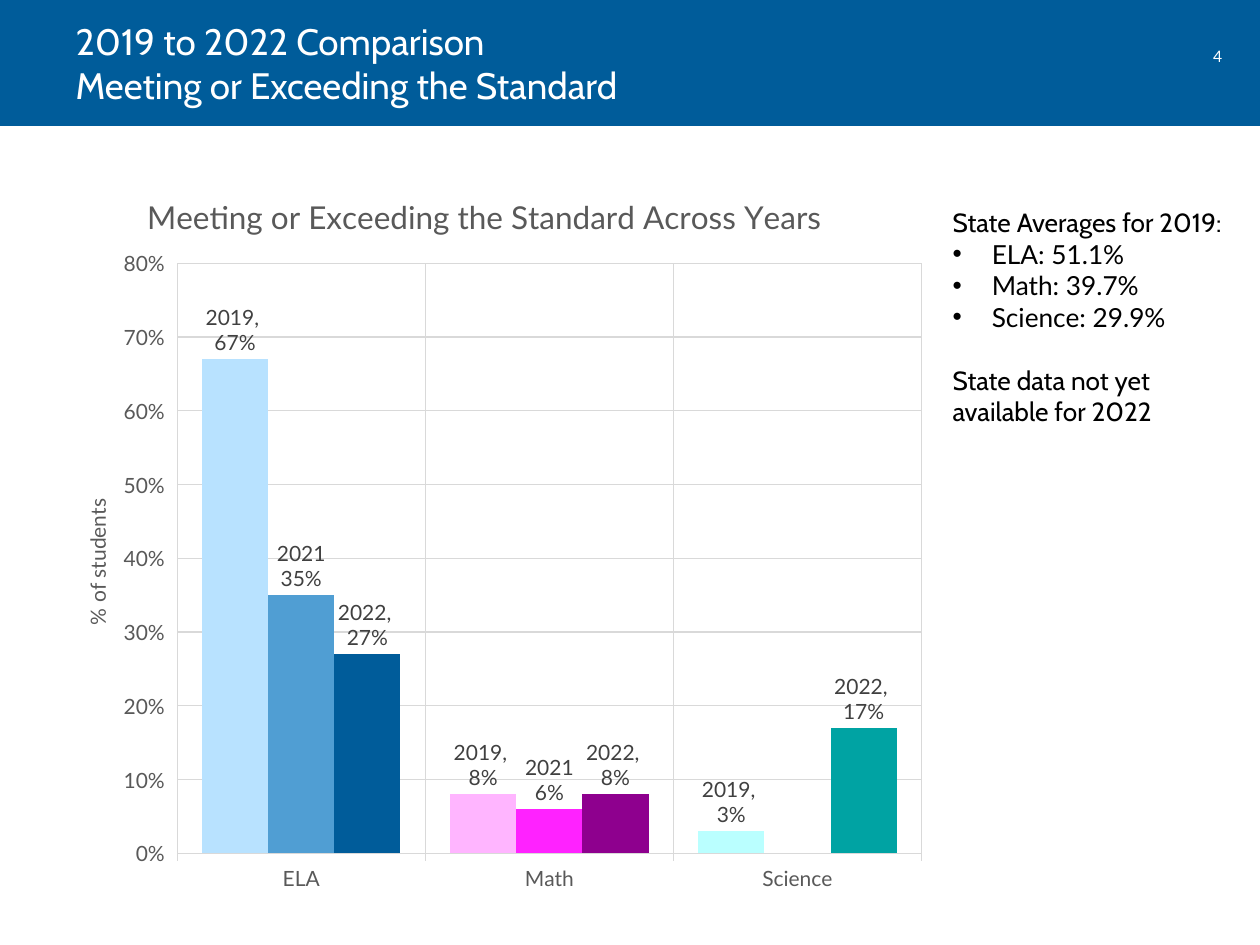
"""Build the slide comparing 2019 to 2022 results with a clustered column chart."""
from pptx import Presentation
from pptx.chart.data import CategoryChartData
from pptx.dml.color import RGBColor
from pptx.enum.chart import XL_CHART_TYPE as ChartType, XL_LABEL_POSITION as LabelPos
from pptx.enum.shapes import MSO_SHAPE as Shape
from pptx.enum.text import MSO_ANCHOR as Anchor, MSO_AUTO_SIZE as AutoSize, PP_ALIGN as Align
from pptx.oxml import parse_xml
from pptx.oxml.ns import nsdecls, qn
from pptx.util import Cm, Pt

COLORS = {
    "banner": "005C9A", "white": "FFFFFF", "black": "000000",
    "axis": "595959", "label": "404040", "grid": "D9D9D9",
}
SUBJECTS = ["ELA", "Math", "Science"]
RESULTS = {
    "2019": ([0.67, 0.08, 0.03], ["B8E2FF", "FFB5FF", "BAFFFF"], ", \n"),
    "2021": ([0.35, 0.06, None], ["509ED3", "FF22FF", "509ED3"], "\n"),
    "2022": ([0.27, 0.08, 0.17], ["005C9A", "8E008E", "00A3A3"], ", \n"),
}
NOTES = [
    ("State Averages for 2019:", False),
    ("ELA: 51.1%", True),
    ("Math: 39.7%", True),
    ("Science: 29.9%", True),
    ("State data not yet available for 2022", False),
]


def rgb(name):
    return RGBColor.from_string(COLORS[name])


def style(font, name, size, color):
    font.name, font.size, font.bold = name, Pt(size), False
    font.color.rgb = rgb(color)


def place(sp, left, top, width, height):
    sp.left, sp.top, sp.width, sp.height = (Cm(v) for v in (left, top, width, height))


def add_banner(s):
    sp = s.shapes.add_shape(Shape.RECTANGLE, 0, 0, Cm(25.4), Cm(2.54))
    sp.shadow.inherit = False
    sp.fill.solid()
    sp.fill.fore_color.rgb = rgb("banner")
    sp.line.fill.background()
    s.shapes._spTree.insert(2, sp._element)


def add_page_number(s, number):
    sp = s.shapes.add_textbox(Cm(23.98), Cm(0.81), Cm(1.14), Cm(0.64))
    tf = sp.text_frame
    tf.word_wrap = True
    p = tf.paragraphs[0]
    p.text = number
    p.alignment = Align.CENTER
    style(p.runs[0].font, "Lato", 9, "white")


def fill_title(sp, text):
    place(sp, 1.27, 0, 22.63, 2.54)
    tf = sp.text_frame
    tf.auto_size, tf.vertical_anchor = AutoSize.NONE, Anchor.MIDDLE
    p = tf.paragraphs[0]
    p.text = text
    p.alignment = Align.LEFT
    for r in p.runs:
        style(r.font, "Cabin", 21, "white")


def set_bullet(p, bulleted):
    pPr = p._p.get_or_add_pPr()
    indent = Cm(0.79) if bulleted else 0
    pPr.set("marL", str(indent))
    pPr.set("indent", str(-indent))
    if bulleted:
        pPr.append(parse_xml(f'<a:buFont {nsdecls("a")} typeface="Arial"/>'))
        pPr.append(parse_xml(f'<a:buChar {nsdecls("a")} char="•"/>'))
    else:
        pPr.append(parse_xml(f'<a:buNone {nsdecls("a")}/>'))


def fill_notes(sp):
    place(sp, 18.95, 4.04, 6.27, 9.32)
    tf = sp.text_frame
    tf.auto_size = AutoSize.NONE
    tf.text = "\n".join(text for text, _ in NOTES)
    for p, (_, bulleted) in zip(tf.paragraphs, NOTES):
        set_bullet(p, bulleted)
        p.space_before = Pt(0)
        style(p.runs[0].font, "Lato" if bulleted else "Cabin", 15, "black")
    tf.paragraphs[-1].space_before = Pt(18)


def set_layout(element, index, target="", **values):
    old = element.find(qn("c:layout"))
    if old is not None:
        element.remove(old)
    modes = "".join(f'<c:{k}Mode val="edge"/>' for k in "xy")
    sizes = "".join(f'<c:{k} val="{v}"/>' for k, v in values.items())
    element.insert(index, parse_xml(
        f'<c:layout {nsdecls("c")}><c:manualLayout>{target}{modes}{sizes}'
        '</c:manualLayout></c:layout>'))


def set_heading(heading, text, size, x, y):
    p = heading.text_frame.paragraphs[0]
    p.text = text
    style(p.runs[0].font, "Lato", size, "axis")
    set_layout(heading._element, 1, x=x, y=y)


def style_axis(axis):
    style(axis.tick_labels.font, "Lato", 12, "axis")
    axis.has_major_gridlines = True
    for line in (axis.format.line, axis.major_gridlines.format.line):
        line.color.rgb = rgb("grid")
        line.width = Pt(0.75)


def style_series(series, colors, separator):
    for i, color in enumerate(colors):
        fill = series.points[i].format.fill
        fill.solid()
        fill.fore_color.rgb = RGBColor.from_string(color)
    labels = series.data_labels
    labels.show_value = labels.show_series_name = True
    labels.number_format, labels.number_format_is_linked = "0%", False
    labels.position = LabelPos.OUTSIDE_END
    style(labels.font, "Lato", 12, "label")
    labels._element.find(qn("c:showBubbleSize")).addnext(
        parse_xml(f'<c:separator {nsdecls("c")}>{separator}</c:separator>'))


def add_results_chart(s):
    data = CategoryChartData(number_format="0%")
    data.categories = SUBJECTS
    for year, (values, _, _) in RESULTS.items():
        data.add_series(year, values)
    chart = s.shapes.add_chart(ChartType.COLUMN_CLUSTERED, Cm(0.86), Cm(3.2),
                               Cm(18.08), Cm(15.06), data).chart
    style(chart.font, "Lato", 10, "black")
    chart.has_legend = False
    set_heading(chart.chart_title, "Meeting or Exceeding the Standard Across Years",
                18, 0.11, 0.04)

    plot = chart.plots[0]
    plot.gap_width, plot.overlap, plot.vary_by_categories = 75, 0, False
    for series, (_, colors, separator) in zip(plot.series, RESULTS.values()):
        style_series(series, colors, separator)

    style_axis(chart.category_axis)
    axis = chart.value_axis
    style_axis(axis)
    axis.format.line.fill.background()
    axis.minimum_scale, axis.maximum_scale, axis.major_unit = 0, 0.8, 0.1
    axis.tick_labels.number_format = "0%"
    axis.tick_labels.number_format_is_linked = False
    set_heading(axis.axis_title, "% of students", 12, 0.04, 0.45)
    axis.axis_title.text_frame._txBody.bodyPr.set("rot", "-5400000")
    set_layout(chart._chartSpace.chart.plotArea, 0,
               '<c:layoutTarget val="inner"/>', x=0.15, y=0.14, w=0.83, h=0.79)


def main():
    prs = Presentation()
    prs.slide_width, prs.slide_height = Cm(25.4), Cm(19.05)
    s = prs.slides.add_slide(prs.slide_layouts[1])
    add_banner(s)
    add_page_number(s, "4")
    add_results_chart(s)
    fill_title(s.shapes.title, "2019 to 2022 Comparison\nMeeting or Exceeding the Standard")
    fill_notes(s.placeholders[1])
    prs.save("out.pptx")


if __name__ == "__main__":
    main()
